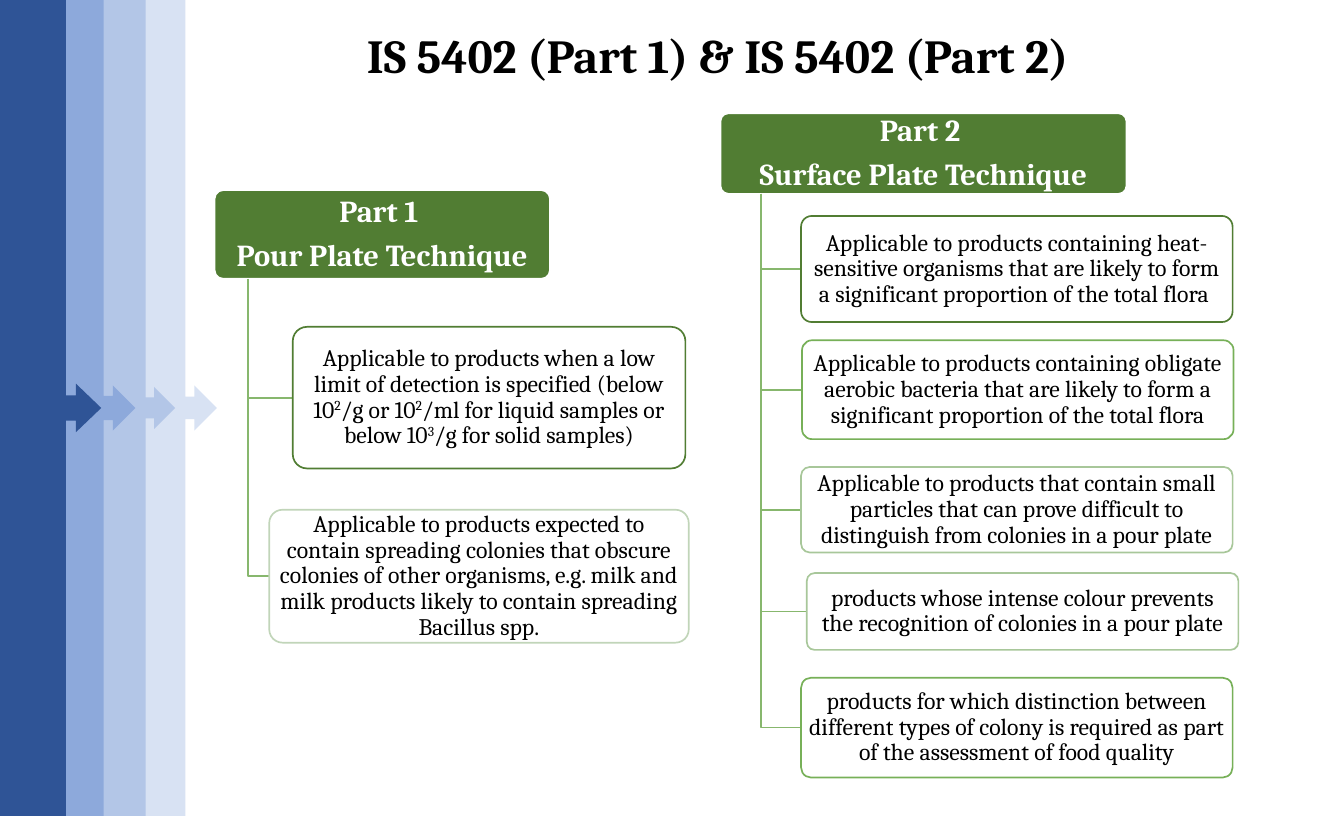
from dataclasses import dataclass

from lxml.etree import SubElement
from pptx import Presentation
from pptx.dml.color import RGBColor
from pptx.enum.shapes import MSO_SHAPE
from pptx.enum.text import MSO_ANCHOR, MSO_AUTO_SIZE, PP_ALIGN
from pptx.oxml.ns import qn
from pptx.util import Cm, Pt


@dataclass(frozen=True)
class Theme:
    font: str = "Cambria"
    title_size: float = 28
    header_size: float = 18
    body_size: float = 14
    header_gap: float = 6.3
    line_width: float = 1
    black: str = "000000"
    white: str = "FFFFFF"
    branch: str = "87B76D"
    dark_green: str = "517D33"
    mid_green: str = "77B058"
    soft_green: str = "A8C79A"
    pale_green: str = "C1D5B9"
    bands: tuple = ("D8E2F3", "B3C6E7", "8DA9DB", "2F5496")


THEME = Theme()
SLIDE_WIDTH, SLIDE_HEIGHT = 28, 17

# Left edge, width, shaft and head proportions, from back to front
BANDS = [
    (2.64, 1.88, 0.25, 0.25),
    (1.9, 1.75, 0.25, 0.25),
    (0.94, 1.88, 0.27, 0.25),
    (0, 2.11, 0.25, 0.24),
]

# Each branch: header lines, header frame, then leaves (frame, outline, text).
# Frames are left, top, width, height in cm; ^ marks enclose a superscript.
BRANCHES = [
    (["Part 1 ", "Pour Plate Technique"], (4.47, 3.96, 6.99, 1.85), [
        ((6.1, 6.81, 8.18, 2.95), THEME.dark_green,
         "Applicable to products when a low limit of detection is specified "
         "(below 10^2^/g or 10^2^/ml for liquid samples or below 10^3^/g for solid samples)"),
        ((5.61, 10.62, 8.74, 2.77), THEME.pale_green,
         "Applicable to products expected to contain spreading colonies that obscure "
         "colonies of other organisms, e.g. milk and milk products likely to contain "
         "spreading Bacillus spp."),
    ]),
    (["Part 2 ", "Surface Plate Technique"], (15.01, 2.36, 8.46, 1.68), [
        ((16.69, 4.5, 8.99, 2.21), THEME.dark_green,
         "Applicable to products containing heat-sensitive organisms that are likely "
         "to form a significant proportion of the total flora "),
        ((16.71, 7.09, 8.99, 2.06), THEME.mid_green,
         "Applicable to products containing obligate aerobic bacteria that are likely "
         "to form a significant proportion of the total flora"),
        ((16.69, 9.73, 8.99, 1.78), THEME.soft_green,
         "Applicable to products that contain small particles that can prove difficult "
         "to distinguish from colonies in a pour plate"),
        ((16.81, 11.94, 8.99, 1.6), THEME.soft_green,
         "products whose intense colour prevents the recognition of colonies in a pour plate"),
        ((16.69, 14.12, 8.99, 2.08), THEME.mid_green,
         "products for which distinction between different types of colony is required "
         "as part of the assessment of food quality"),
    ]),
]


def rgb(color):
    return RGBColor.from_string(color)


def write_para(para, text, size, color, bold=False):
    """Fill a centred paragraph run by run, raising the parts between ^ marks."""
    para.alignment = PP_ALIGN.CENTER
    para.line_spacing = 0.9
    para.space_before = Pt(0)
    for index, part in enumerate(text.split("^")):
        span = para.add_run()
        span.text = part
        span.font.name = THEME.font
        span.font.size = Pt(size)
        span.font.bold = bold
        span.font.color.rgb = rgb(color)
        if index % 2:
            span.font._element.set("baseline", "30000")


def add_filled_shape(page, kind, frame, fill, adjustments):
    box = page.shapes.add_shape(kind, *(Cm(length) for length in frame))
    box.shadow.inherit = False
    for index, value in enumerate(adjustments):
        box.adjustments[index] = value
    box.fill.solid()
    box.fill.fore_color.rgb = rgb(fill)
    box.line.fill.background()
    return box


def add_rounded_box(page, frame, fill, outline):
    box = add_filled_shape(page, MSO_SHAPE.ROUNDED_RECTANGLE, frame, fill, [0.1])
    box.line.color.rgb = rgb(outline)
    box.line.width = Pt(THEME.line_width)
    text = box.text_frame
    text.word_wrap = True
    text.vertical_anchor = MSO_ANCHOR.MIDDLE
    text.margin_left = text.margin_right = Cm(0.08)
    text.margin_top = text.margin_bottom = Cm(0.05)
    return box


def add_header(page, lines, frame):
    text = add_rounded_box(page, frame, THEME.dark_green, THEME.white).text_frame
    for index, line in enumerate(lines):
        para = text.add_paragraph() if index else text.paragraphs[0]
        write_para(para, line, THEME.header_size, THEME.white, bold=True)
        if index:
            para.space_before = Pt(THEME.header_gap)


def add_leaf(page, frame, outline, words):
    box = add_rounded_box(page, frame, THEME.white, outline)
    color = box._element.spPr.find(qn("a:solidFill"))[0]
    SubElement(color, qn("a:alpha")).set("val", "90000")
    write_para(box.text_frame.paragraphs[0], words, THEME.body_size, THEME.black)


def add_elbow(page, header_frame, leaf_frame):
    """Run down from a tenth of the header's width, then across to the leaf."""
    left, top, width, height = header_frame
    trunk_x = Cm(left + width / 10)
    leaf_y = Cm(leaf_frame[1] + leaf_frame[3] / 2)
    builder = page.shapes.build_freeform(trunk_x, Cm(top + height))
    builder.add_line_segments([(trunk_x, leaf_y), (Cm(leaf_frame[0]), leaf_y)], close=False)
    elbow = builder.convert_to_shape()
    elbow.shadow.inherit = False
    elbow.fill.background()
    elbow.line.color.rgb = rgb(THEME.branch)
    elbow.line.width = Pt(THEME.line_width)


def add_title(page, words):
    title = page.shapes.title
    title.left, title.top, title.width, title.height = Cm(4.47), Cm(0.56), Cm(20.96), Cm(2.13)
    title.text_frame.word_wrap = True
    title.text_frame.auto_size = MSO_AUTO_SIZE.NONE
    title.text_frame.vertical_anchor = MSO_ANCHOR.TOP
    write_para(title.text_frame.paragraphs[0], words, THEME.title_size, THEME.black, bold=True)


def main():
    deck = Presentation()
    deck.slide_width, deck.slide_height = Cm(SLIDE_WIDTH), Cm(SLIDE_HEIGHT)
    page = deck.slides.add_slide(deck.slide_layouts[5])

    # Blue bands along the left edge
    for (left, width, shaft, head), color in zip(BANDS, THEME.bands):
        add_filled_shape(page, MSO_SHAPE.RIGHT_ARROW_CALLOUT, (left, 0, width, SLIDE_HEIGHT),
                         color, [shaft, head, 0.25, 0.65])

    add_title(page, "IS 5402 (Part 1) & IS 5402 (Part 2)")

    # The two technique hierarchies
    for lines, header_frame, leaves in BRANCHES:
        add_header(page, lines, header_frame)
        for leaf_frame, outline, words in leaves:
            add_elbow(page, header_frame, leaf_frame)
            add_leaf(page, leaf_frame, outline, words)

    deck.save("out.pptx")


if __name__ == "__main__":
    main()
